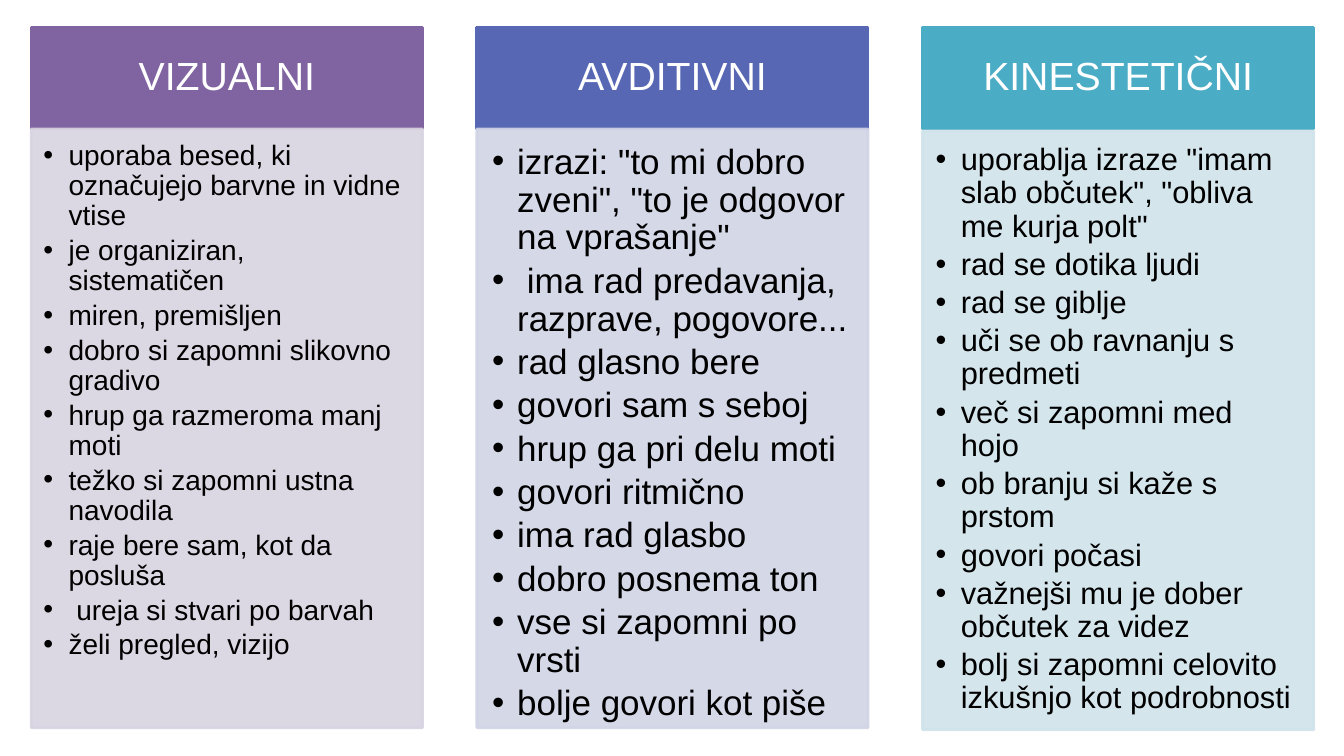
from lxml import etree
from pptx import Presentation
from pptx import util as u
from pptx.dml.color import RGBColor
from pptx.enum import shapes, text
from pptx.oxml.ns import qn

PX = 9144
INK = {
    "violet": "8064A2", "lilac": "D8D3E0",
    "indigo": "5767B4", "haze": "D1D4E5",
    "teal": "4BACC6", "mist": "D0E3EA",
    "white": "FFFFFF", "black": "000000",
}
LEFT, TOP, PITCH, WIDTH = 31, 27, 442, 388
HEAD, BODY = 101, 594

STYLES = [
    ("VIZUALNI", "violet", "lilac", 128, 20, (12, 12, 16, 17), [
        "uporaba besed, ki označujejo barvne in vidne vtise",
        "je organiziran, sistematičen",
        "miren, premišljen",
        "dobro si zapomni slikovno gradivo",
        "hrup ga razmeroma manj moti",
        "težko si zapomni ustna navodila",
        "raje bere sam, kot da posluša",
        " ureja si stvari po barvah",
        "želi pregled, vizijo",
    ]),
    ("AVDITIVNI", "indigo", "haze", 128, 25, (15, 15, 19, 22), [
        'izrazi: "to mi dobro zveni", "to je odgovor na vprašanje"',
        " ima rad predavanja, razprave, pogovore...",
        "rad glasno bere",
        "govori sam s seboj",
        "hrup ga pri delu moti",
        "govori ritmično",
        "ima rad glasbo",
        "dobro posnema ton",
        "vse si zapomni po vrsti",
        "bolje govori kot piše",
    ]),
    ("KINESTETIČNI", "teal", "mist", 130, 22, (13, 13, 17, 19), [
        'uporablja izraze "imam slab občutek", "obliva me kurja polt"',
        "rad se dotika ljudi",
        "rad se giblje",
        "uči se ob ravnanju s predmeti",
        "več si zapomni med hojo",
        "ob branju si kaže s prstom",
        "govori počasi",
        "važnejši mu je dober občutek za videz",
        "bolj si zapomni celovito izkušnjo kot podrobnosti",
    ]),
]


class Deck:
    font = "Arial"

    def __init__(self, wide, high):
        self.file = Presentation()
        self.file.slide_width = wide * PX
        self.file.slide_height = high * PX
        self.slide = self.file.slides.add_slide(self.file.slide_layouts[6])

    def paint(self, fill, ink, alpha):
        fill.solid()
        fill.fore_color.rgb = RGBColor.from_string(INK[ink])
        if alpha < 100:
            for tone in fill._xPr.iter(qn("a:srgbClr")):
                etree.SubElement(tone, qn("a:alpha"), val=str(alpha * 1000))

    def panel(self, box, ink, insets, alpha=100):
        left, top, wide, high = (n * PX for n in box)
        rect = self.slide.shapes.add_shape(
            shapes.MSO_SHAPE.RECTANGLE, left, top, wide, high)
        rect.shadow.inherit = False
        self.paint(rect.fill, ink, alpha)
        rect.line.width = u.Pt(2)
        self.paint(rect.line.fill, ink, alpha)
        frame = rect.text_frame
        frame.word_wrap = True
        (frame.margin_left, frame.margin_top,
         frame.margin_right, frame.margin_bottom) = (n * PX for n in insets)
        return frame

    def format(self, para, size, ink, align):
        para.alignment = align
        para.line_spacing = 0.9
        for run in para.runs:
            run.font.name = self.font
            run.font.size = u.Pt(size)
            run.font.color.rgb = RGBColor.from_string(INK[ink])

    def header(self, box, label, ink):
        frame = self.panel(box, ink, (22, 12, 22, 12))
        frame.vertical_anchor = text.MSO_ANCHOR.MIDDLE
        frame.text = label
        self.format(frame.paragraphs[0], 28, "white", text.PP_ALIGN.CENTER)

    def bullets(self, box, items, ink, size, insets):
        frame = self.panel(box, ink, insets, alpha=90)
        frame.vertical_anchor = text.MSO_ANCHOR.TOP
        frame.text = "\n".join(items)
        for para in frame.paragraphs:
            para.level = 1
            props = para._p.get_or_add_pPr()
            props.set("marL", str(25 * PX))
            props.set("indent", str(-25 * PX))
            etree.SubElement(props, qn("a:buFont"), typeface=self.font)
            etree.SubElement(props, qn("a:buChar"), char="•")
            para.space_after = u.Pt(size * 0.16)
            self.format(para, size, "black", text.PP_ALIGN.LEFT)

    def save(self):
        self.file.save("out.pptx")


def main():
    deck = Deck(1333, 750)
    for col, (label, dark, light, top, size, insets, items) in enumerate(STYLES):
        left = LEFT + col * PITCH
        deck.header((left, TOP, WIDTH, HEAD), label, dark)
        deck.bullets((left, top, WIDTH, BODY), items, light, size, insets)
    deck.save()


if __name__ == "__main__":
    main()
